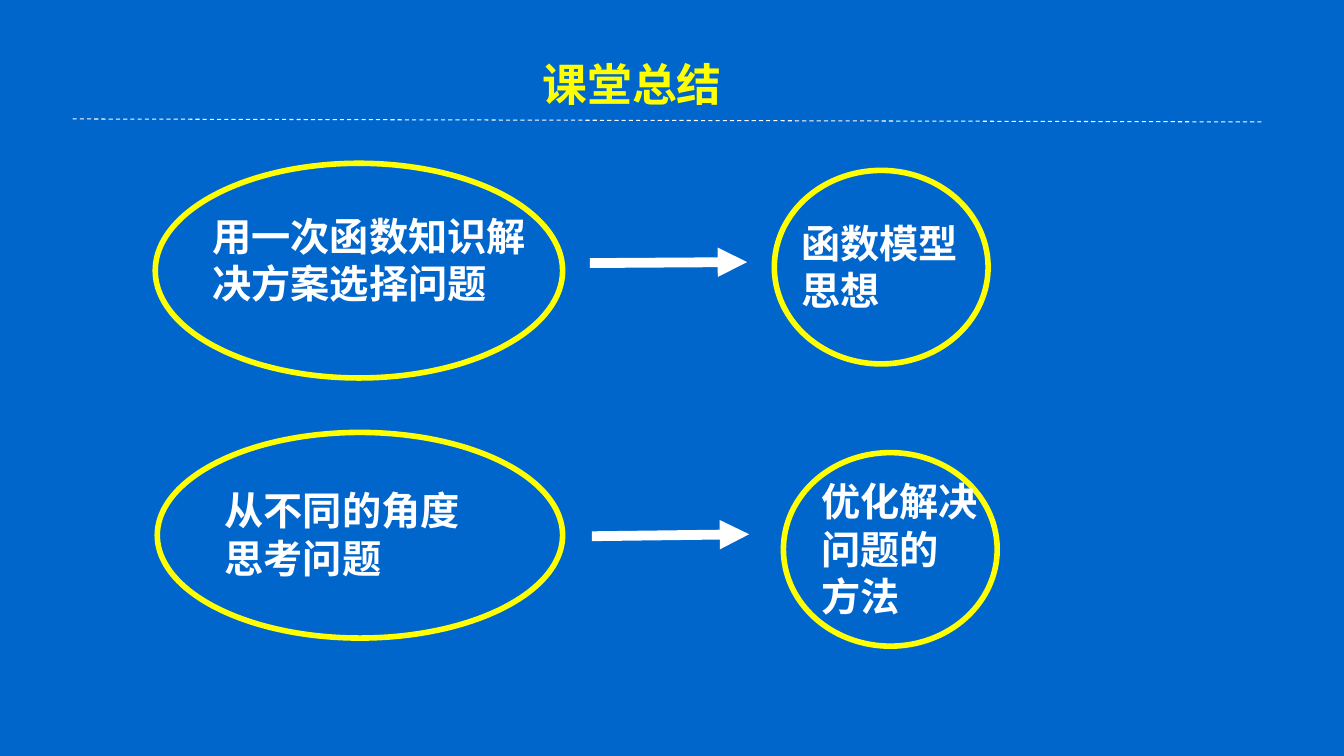
from lxml import etree
from pptx import Presentation
from pptx.dml.color import RGBColor
from pptx.enum.dml import MSO_LINE
from pptx.enum.lang import MSO_LANGUAGE_ID
from pptx.enum.shapes import MSO_CONNECTOR, MSO_SHAPE
from pptx.enum.text import MSO_ANCHOR, MSO_AUTO_SIZE, PP_ALIGN
from pptx.oxml.ns import qn
from pptx.util import Inches, Pt

BLUE = RGBColor(0x00, 0x66, 0xCC)
YELLOW = RGBColor(0xFF, 0xFF, 0x00)
WHITE = RGBColor(0xFF, 0xFF, 0xFF)

TITLE = "课堂总结"
TITLE_BOX = (5.27, 0.51, 2, 0.64)
DIVIDER = (0.72, 1.18, 12.54, 1.21)
ARROWS = [(5.85, 2.61, 7.41, 2.6), (5.87, 5.32, 7.43, 5.3)]
BUBBLES = [
    ((1.54, 1.62, 4.04, 2.13), (2.01, 2.06, 3.36, 1.04), True,
     ["用一次函数知识解决方案选择问题"]),
    ((7.68, 1.69, 2.12, 1.92), (7.85, 2.13, 1.77, 1.04), False,
     ["函数模型", "思想"]),
    ((1.56, 4.29, 4.02, 2.04), (2.13, 4.78, 2.92, 1.04), True,
     ["从不同的角度", "思考问题"]),
    ((7.77, 4.49, 2.12, 1.92), (8.05, 4.69, 1.77, 1.51), False,
     ["优化解决", "问题的", "方法"]),
]


def inches(values):
    """Convert a sequence of numbers to lengths."""
    return [Inches(v) for v in values]


def write(tf, lines, font, size, color, wrap, align=PP_ALIGN.LEFT):
    """Fill a text frame with bold paragraphs."""
    tf.word_wrap = wrap
    tf.auto_size = MSO_AUTO_SIZE.SHAPE_TO_FIT_TEXT
    tf.vertical_anchor = MSO_ANCHOR.TOP
    tf.text = "\n".join(lines)
    for p in tf.paragraphs:
        p.alignment = align
        p.font.name = font
        p.font.size = Pt(size)
        p.font.bold = True
        p.font.color.rgb = color
        p.font.language_id = MSO_LANGUAGE_ID.SIMPLIFIED_CHINESE


def add_line(slide, ends, width):
    """Add a white straight line without a shadow."""
    line = slide.shapes.add_connector(MSO_CONNECTOR.STRAIGHT, *inches(ends))
    line.line.color.rgb = WHITE
    line.line.width = Pt(width)
    etree.SubElement(line._element.spPr, qn("a:effectLst"))
    return line


def add_bubble(slide, oval, box, wrap, lines):
    """Add a grouped yellow ellipse and its text."""
    group = slide.shapes.add_group_shape()
    sp = group.shapes.add_shape(MSO_SHAPE.OVAL, *inches(oval))
    sp.shadow.inherit = False
    sp.fill.background()
    sp.line.color.rgb = YELLOW
    sp.line.width = Pt(4)
    tf = group.shapes.add_textbox(*inches(box)).text_frame
    write(tf, lines, "Arial", 28, WHITE, wrap)


def main():
    """Build the class summary slide."""
    prs = Presentation()
    prs.slide_width, prs.slide_height = Inches(13.33), Inches(7.5)
    slide = prs.slides.add_slide(prs.slide_layouts[5])
    slide.background.fill.solid()
    slide.background.fill.fore_color.rgb = BLUE

    title = slide.shapes.title
    title.left, title.top, title.width, title.height = inches(TITLE_BOX)
    write(title.text_frame, [TITLE], "Noto Sans CJK SC", 32, YELLOW, False,
          PP_ALIGN.CENTER)

    add_line(slide, DIVIDER, 0.75).line.dash_style = MSO_LINE.DASH
    for ends in ARROWS:
        arrow = add_line(slide, ends, 7)
        ln = arrow.line._get_or_add_ln()
        etree.SubElement(ln, qn("a:tailEnd"), type="triangle")
    for bubble in BUBBLES:
        add_bubble(slide, *bubble)

    prs.save("out.pptx")


if __name__ == "__main__":
    main()
